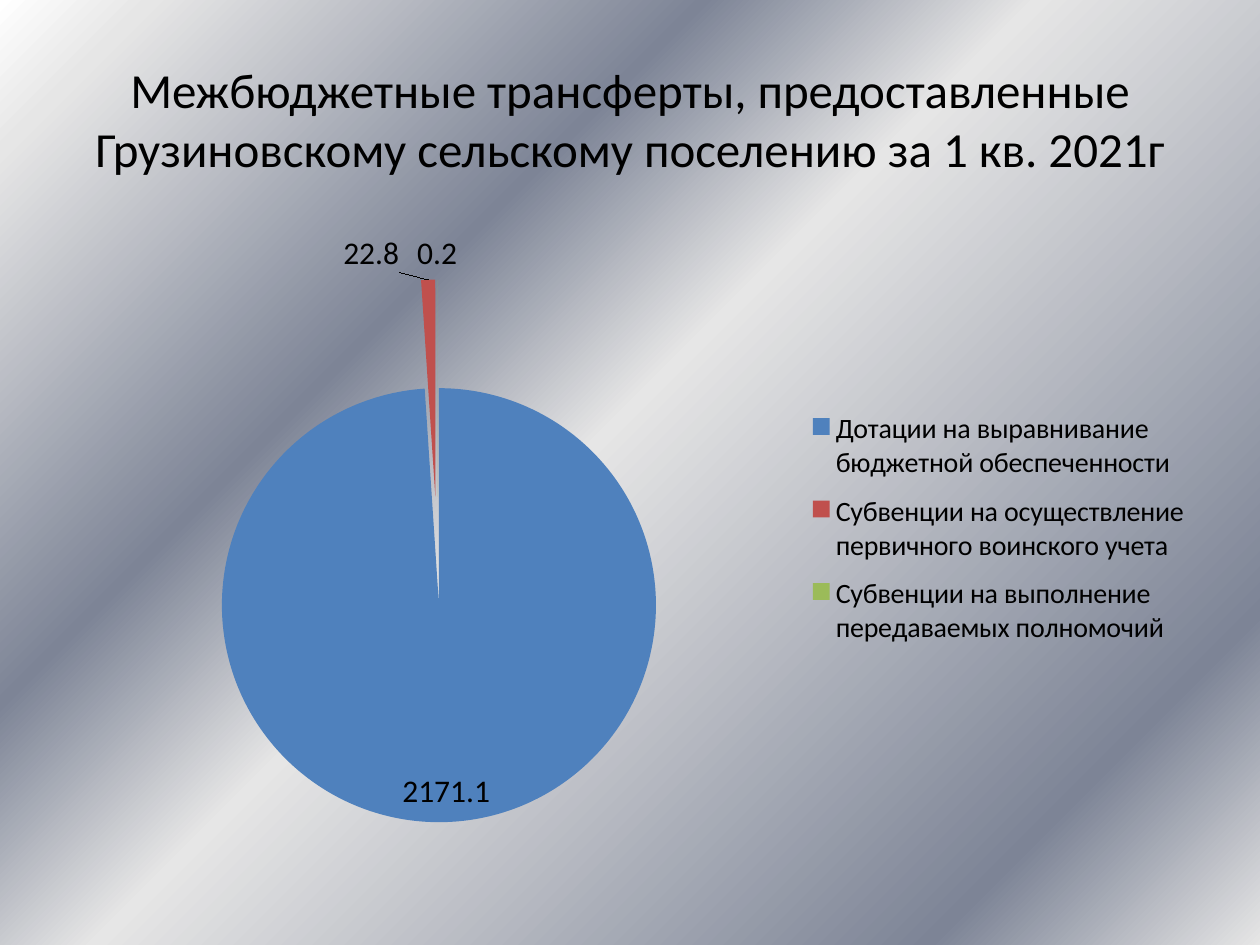
from lxml.etree import SubElement
from pptx import Presentation
from pptx.chart.data import CategoryChartData as ChartData
from pptx.dml.color import RGBColor
from pptx.enum.chart import XL_CHART_TYPE as ChartType
from pptx.enum.chart import XL_LABEL_POSITION as LabelPosition
from pptx.enum.chart import XL_LEGEND_POSITION as LegendPosition
from pptx.enum.text import MSO_ANCHOR as Anchor
from pptx.enum.text import PP_ALIGN as Align
from pptx.oxml import parse_xml
from pptx.oxml.ns import nsdecls, qn
from pptx.util import Inches, Pt

COLORS = {
    "text": "000000",
    "grants": "4F81BD",
    "military": "C0504D",
    "delegated": "9BBB59",
}
BACKDROP = [(0, "FFFFFF"), (7, "E6E6E6"), (32, "7D8496"),
            (47, "E6E6E6"), (85, "7D8496"), (100, "E6E6E6")]
TRANSFERS = [
    ("Дотации на выравнивание бюджетной обеспеченности", 2171.1, "grants"),
    ("Субвенции на осуществление первичного воинского учета", 22.8, "military"),
    ("Субвенции на выполнение передаваемых полномочий", 0.2, "delegated"),
]


def style_font(font, size, color="text", name="Calibri"):
    font.name, font.size, font.bold = name, Pt(size), False
    font.color.rgb = RGBColor.from_string(COLORS[color])


def write_text(frame, text, size, align=Align.CENTER, anchor=Anchor.MIDDLE):
    frame.word_wrap = True
    frame.vertical_anchor = anchor
    para = frame.paragraphs[0]
    para.alignment = align
    span = para.add_run()
    span.text = text
    style_font(span.font, size)


def manual_layout(**values):
    """Chart layout whose values are shares of the chart's size."""
    layout = parse_xml(f"<c:layout {nsdecls('c')}><c:manualLayout/></c:layout>")
    for tag, value in values.items():
        SubElement(layout[0], qn(f"c:{tag}")).set("val", str(value))
    return layout


class SlideBuilder:
    def __init__(self, deck):
        self.deck = deck
        self.page = deck.slides.add_slide(deck.slide_layouts[6])

    def area(self, left, top, width, height):
        """Turn shares of the slide's size into lengths."""
        wide, high = self.deck.slide_width, self.deck.slide_height
        return (int(left * wide), int(top * high),
                int(width * wide), int(height * high))

    def gradient(self, stops, angle):
        fill = self.page.background.fill
        fill.gradient()
        fill.gradient_angle = -angle % 360  # python-pptx counts anticlockwise
        stop_list = fill.gradient_stops[0]
        holder = self.page.background._cSld.find(".//" + qn("a:gsLst"))
        del stop_list
        for stop in list(holder):
            holder.remove(stop)
        for share, color in stops:
            stop = SubElement(holder, qn("a:gs"), pos=str(share * 1000))
            SubElement(stop, qn("a:srgbClr"), val=color)

    def title(self, text, area, size):
        box = self.page.shapes.add_textbox(*self.area(*area))
        write_text(box.text_frame, text, size)

    def pie(self, rows, area, size, legend_size, explosion):
        data = ChartData()
        data.categories = [name for name, _, _ in rows]
        data.add_series("Series 1", [value for _, value, _ in rows])
        chart = self.page.shapes.add_chart(
            ChartType.PIE, *self.area(*area), data).chart
        chart.has_title = False
        style_font(chart.font, size)

        plot_area = chart.plots[0]._element.getparent()
        for old in plot_area.findall(qn("c:layout")):
            plot_area.remove(old)
        plot_area.insert(0, manual_layout(
            layoutTarget="inner", xMode="edge", yMode="edge",
            x=0.09, y=0.1, w=0.48, h=0.87))

        series = chart.plots[0].series[0]
        for index, (_, _, color) in enumerate(rows):
            fill = series.points[index].format.fill
            fill.solid()
            fill.fore_color.rgb = RGBColor.from_string(COLORS[color])
        first_point = series._element.find(qn("c:dPt"))
        first_point.addprevious(parse_xml(
            f'<c:explosion {nsdecls("c")} val="{explosion}"/>'))
        self.pie_labels(series, size)
        self.legend(chart, legend_size)

    def pie_labels(self, series, size):
        labels = series.data_labels
        labels.show_value = True
        labels.position = LabelPosition.BEST_FIT
        style_font(labels.font, size)
        labels._element.find(qn("c:showLeaderLines")).set("val", "1")
        moved = series.points[1].data_label
        moved.position = LabelPosition.BEST_FIT
        label = moved._dLbl
        label.find(qn("c:idx")).addnext(manual_layout(x=-0.05, y=0))
        for tag in ("showLegendKey", "showCatName", "showSerName", "showPercent"):
            label.find(qn(f"c:{tag}")).set("val", "0")

    def legend(self, chart, size):
        chart.has_legend = True
        legend = chart.legend
        legend.position = LegendPosition.RIGHT
        legend.include_in_layout = False
        style_font(legend.font, size)
        for old in legend._element.findall(qn("c:layout")):
            legend._element.remove(old)
        legend._element.find(qn("c:legendPos")).addnext(manual_layout(
            xMode="edge", yMode="edge", x=0.66, y=0.29, w=0.34, h=0.42))


def main():
    deck = Presentation()
    deck.slide_width, deck.slide_height = Inches(10), Inches(7.5)
    slide = SlideBuilder(deck)
    slide.gradient(BACKDROP, angle=45)
    slide.title("Межбюджетные трансферты, предоставленные Грузиновскому "
                "сельскому поселению за 1 кв. 2021г",
                (0.05, 0.04, 0.9, 0.17), size=28)
    slide.pie(TRANSFERS, (0.05, 0.23, 0.9, 0.66),
              size=18, legend_size=16, explosion=25)
    deck.save("out.pptx")


if __name__ == "__main__":
    main()
